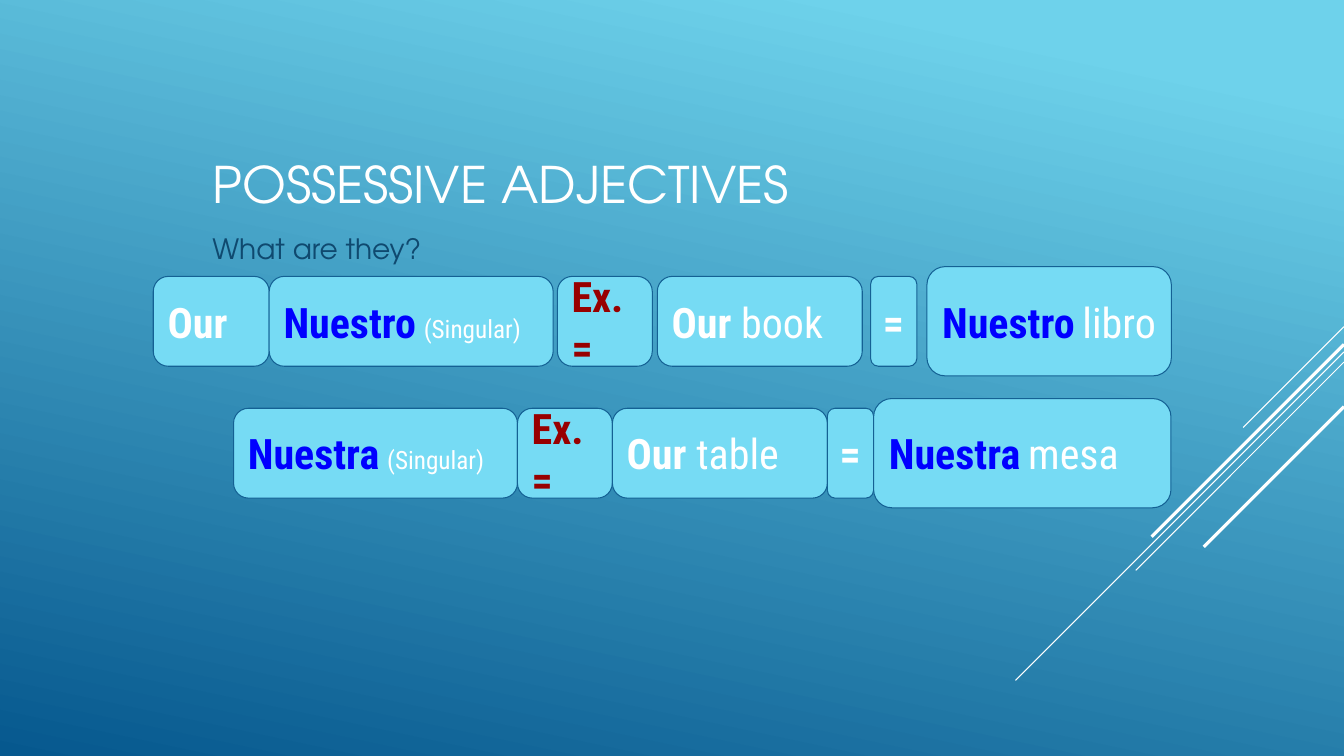
import pptx
import pptx.util
import pptx.dml.color
import pptx.enum.shapes
import pptx.enum.text
import pptx.oxml

COLS, ROWS = 160, 90
WHITE, BLUE, RED, NAVY = "FFFFFF", "0000FF", "980000", "0F496F"
FILL, EDGE = "76DBF4", "146194"
HEAD, BODY = "TeX Gyre Adventor", "Roboto Condensed"


def hue(code):
    return pptx.dml.color.RGBColor.from_string(code)


class Deck:
    """Holds the style, the grid and the current slide."""

    def __init__(self):
        self.prs = pptx.Presentation()
        self.prs.slide_width = pptx.util.Inches(13.33)
        self.prs.slide_height = pptx.util.Inches(7.5)
        self.slide = self.prs.slides.add_slide(self.prs.slide_layouts[5])
        self.shapes = self.slide.shapes

    def spot(self, col, row):
        """Turn a grid point or size into slide lengths."""
        return (round(col * self.prs.slide_width / COLS),
                round(row * self.prs.slide_height / ROWS))

    def back(self, stops, angle):
        fill = self.slide.background.fill
        fill.gradient()
        fill.gradient_angle = angle
        for stop, (place, code) in zip(fill.gradient_stops, stops):
            stop.position = place
            stop.color.rgb = hue(code)

    def frame(self, shape, anchor):
        text = shape.text_frame
        text.word_wrap = True
        text.auto_size = pptx.enum.text.MSO_AUTO_SIZE.NONE
        text.vertical_anchor = anchor
        text.margin_left = text.margin_right = pptx.util.Inches(0.1)
        text.margin_top = text.margin_bottom = pptx.util.Inches(0.1)
        return text

    def style(self, run, face, size, code, bold=False):
        run.font.name = face
        run.font.size = pptx.util.Pt(size)
        run.font.color.rgb = hue(code)
        run.font.bold = bold

    def label(self, shape, words, size, code):
        text = self.frame(shape, pptx.enum.text.MSO_ANCHOR.TOP)
        text.text = words
        para = text.paragraphs[0]
        para.alignment = pptx.enum.text.PP_ALIGN.LEFT
        self.style(para.runs[0], HEAD, size, code)

    def title(self, words, col, row, wide, high):
        shape = self.shapes.title
        shape.left, shape.top = self.spot(col, row)
        shape.width, shape.height = self.spot(wide, high)
        self.label(shape, words, 36, WHITE)

    def note(self, words, col, row, wide, high):
        shape = self.shapes.add_textbox(
            *self.spot(col, row), *self.spot(wide, high))
        self.label(shape, words, 20, NAVY)

    def slant(self, row, reach, weight):
        """Draw a 45-degree line down from the right edge."""
        line = self.shapes.add_connector(
            pptx.enum.shapes.MSO_CONNECTOR.STRAIGHT,
            *self.spot(COLS, row), *self.spot(COLS - reach, row + reach))
        line.line.color.rgb = hue(WHITE)
        line.line.width = pptx.util.Pt(weight)
        props = line._element.spPr
        props.append(props.makeelement(
            pptx.oxml.ns.qn("a:effectLst"), {}))

    def card(self, col, mid, wide, high, parts):
        """Draw a card centred on row mid; parts are styled runs."""
        shape = self.shapes.add_shape(
            pptx.enum.shapes.MSO_SHAPE.FLOWCHART_ALTERNATE_PROCESS,
            *self.spot(col, mid - high / 2), *self.spot(wide, high))
        shape.shadow.inherit = False
        shape.fill.solid()
        shape.fill.fore_color.rgb = hue(FILL)
        shape.line.color.rgb = hue(EDGE)
        shape.line.width = pptx.util.Pt(0.75)
        text = self.frame(shape, pptx.enum.text.MSO_ANCHOR.MIDDLE)
        para = text.paragraphs[0]
        para.alignment = pptx.enum.text.PP_ALIGN.LEFT
        for words, size, code, bold in parts:
            run = para.add_run()
            run.text = words
            self.style(run, BODY, size, code, bold)

    def chain(self, col, mid, cards):
        """Set cards left to right, each after its own gap."""
        for gap, wide, high, parts in cards:
            col += gap
            self.card(col, mid, wide, high, parts)
            col += wide


def term(word, tail, size):
    return [(word, 30, BLUE, True), (" ", 24, WHITE, False),
            (tail, size, WHITE, False)]


def ours(noun):
    return [("Our ", 30, WHITE, True), (noun, 30, WHITE, False)]


def main():
    deck = Deck()
    deck.back([(0.1, "6ED2EB"), (1, "06588E")], 258)
    for row, reach, weight in [(38.9, 12, 0.75), (41.9, 39.1, 0.75),
                               (43.1, 24.8, 0.75), (41, 22.9, 2.25),
                               (48.4, 16.7, 2.25)]:
        deck.slant(row, reach, weight)
    deck.title("POSSESSIVE ADJECTIVES", 24.1, 17, 111.9, 7.6)
    deck.note("What are they?", 24.1, 26.4, 111.9, 44.9)

    low, tall = 10.7, 13
    our = [("Our", 30, WHITE, True)]
    sample = [("Ex.=", 30, RED, True)]
    equal = [("=", 30, WHITE, True)]
    deck.chain(18.25, 38.25, [
        (0, 13.8, low, our),
        (0, 33.8, low, term("Nuestro", "(Singular)", 18)),
        (0.5, 11.3, low, sample),
        (0.6, 24.4, low, ours("book")),
        (1, 5.5, low, equal),
        (1.2, 29.1, tall, term("Nuestro", "libro", 30))])
    deck.chain(27.8, 53.95, [
        (0, 33.8, low, term("Nuestra", "(Singular)", 18)),
        (0, 11.3, low, sample),
        (0, 25.6, low, ours("table")),
        (0, 5.5, low, equal),
        (0, 35.4, tall, term("Nuestra", "mesa", 30))])
    deck.prs.save("out.pptx")


if __name__ == "__main__":
    main()
